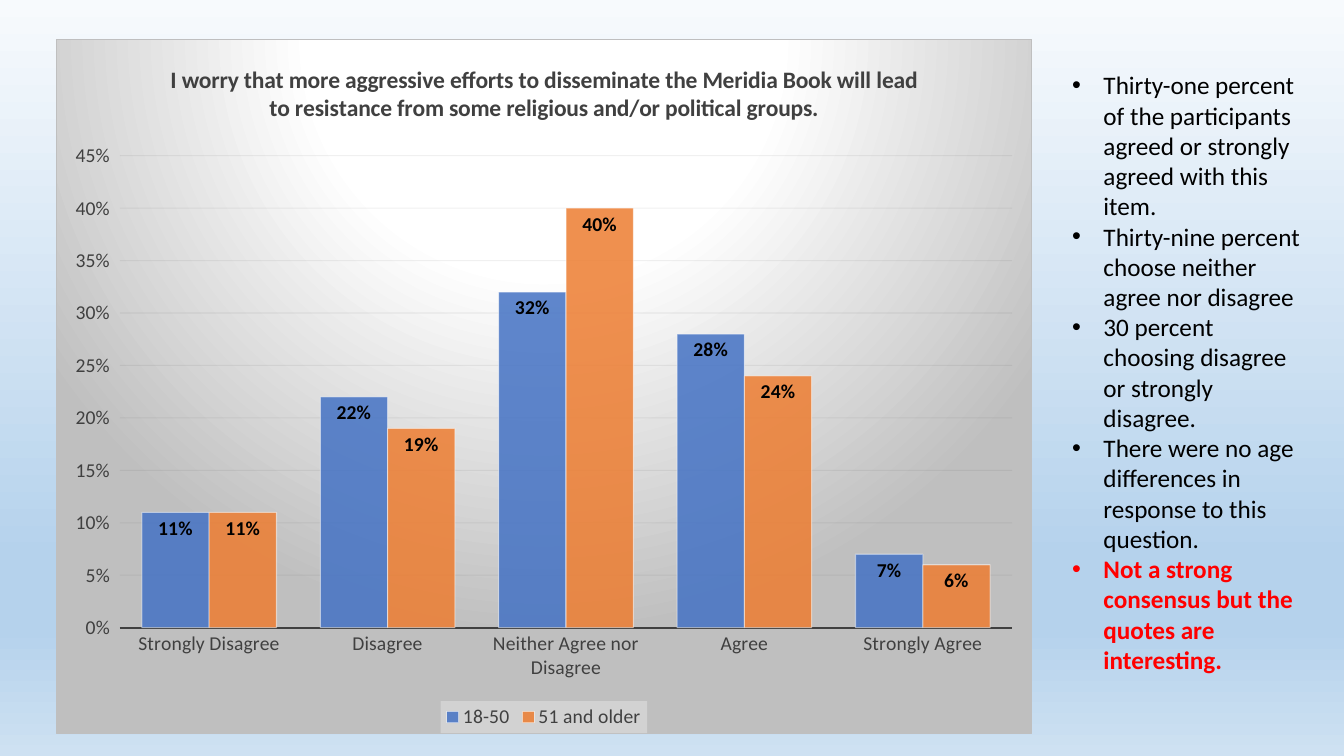
from lxml import etree
from pptx import Presentation
from pptx.chart.data import CategoryChartData
from pptx.dml.color import RGBColor
from pptx.enum.chart import XL_CHART_TYPE as ChartType
from pptx.enum.chart import XL_LABEL_POSITION as LabelPosition
from pptx.enum.chart import XL_LEGEND_POSITION as LegendPosition
from pptx.enum.chart import XL_TICK_MARK as TickMark
from pptx.enum.text import MSO_AUTO_SIZE as AutoSize
from pptx.oxml import parse_xml
from pptx.oxml.ns import nsdecls, qn
from pptx.util import Cm, Pt

FONT = "Calibri"
BLACK = RGBColor(0x00, 0x00, 0x00)
WHITE = RGBColor(0xFF, 0xFF, 0xFF)
RED = RGBColor(0xFF, 0x00, 0x00)
DARK_GREY = RGBColor(0x40, 0x40, 0x40)
GRID = RGBColor(0x0D, 0x0D, 0x0D)
SILVER = RGBColor(0xBF, 0xBF, 0xBF)
PALE_GREY = RGBColor(0xF2, 0xF2, 0xF2)
BLUE = RGBColor(0x44, 0x72, 0xC4)
ORANGE = RGBColor(0xED, 0x7D, 0x31)
SKY_TOP = RGBColor(0xF7, 0xFA, 0xFD)
SKY_MIDDLE = RGBColor(0xB5, 0xD2, 0xEC)
SKY_BOTTOM = RGBColor(0xCE, 0xE1, 0xF2)

SKY_STOPS = [(0, SKY_TOP), (74, SKY_MIDDLE), (83, SKY_MIDDLE), (100, SKY_BOTTOM)]
SPOTLIGHT_STOPS = [(0, WHITE), (39, WHITE), (100, SILVER)]
LINEAR_DOWN = '<a:lin ang="5400000" scaled="0"/>'
SPOTLIGHT = ('<a:path path="circle">'
             '<a:fillToRect l="50000" t="-80000" r="50000" b="180000"/></a:path>')

QUESTION = ("I worry that more aggressive efforts to disseminate the Meridia Book "
            "will lead to resistance from some religious and/or political groups.")
ANSWERS = ["Strongly Disagree", "Disagree", "Neither Agree nor Disagree",
           "Agree", "Strongly Agree"]
AGE_GROUPS = [
    ("18-50", [0.11, 0.22, 0.32, 0.28, 0.07], BLUE),
    ("51 and older", [0.11, 0.19, 0.40, 0.24, 0.06], ORANGE),
]
FINDINGS = [
    "Thirty-one percent of the participants agreed or strongly agreed with this item.",
    "Thirty-nine percent choose neither agree nor disagree",
    "30 percent choosing disagree or strongly disagree.",
    "There were no age differences in response to this question.",
]
CONCLUSION = "Not a strong consensus but the quotes are interesting."


def gradient(stops, direction):
    marks = "".join(f'<a:gs pos="{pos * 1000}"><a:srgbClr val="{color}"/></a:gs>'
                    for pos, color in stops)
    return (f'<a:gradFill {nsdecls("a")} rotWithShape="1">'
            f'<a:gsLst>{marks}</a:gsLst>{direction}</a:gradFill>')


def set_alpha(fill_parent, percent):
    color = next(fill_parent.iter(qn("a:srgbClr")))
    etree.SubElement(color, qn("a:alpha"), val=str(percent * 1000))


def style_font(font, size, color, bold=False):
    font.name, font.size, font.bold = FONT, Pt(size), bold
    font.color.rgb = color


def style_line(line, color, width, alpha=100):
    line.color.rgb = color
    line.width = Pt(width)
    if alpha < 100:
        set_alpha(line._get_or_add_ln(), alpha)


def paint_background(slide):
    slide.background.fill.solid()
    solid = next(slide.element.iter(qn("p:bgPr")))[0]
    solid.getparent().replace(solid, parse_xml(gradient(SKY_STOPS, LINEAR_DOWN)))


def add_area_format(text_properties, fill, line="<a:ln><a:noFill/></a:ln>"):
    """Fill and outline of a chart part, placed ahead of its text properties."""
    text_properties.addprevious(
        parse_xml(f'<c:spPr {nsdecls("c", "a")}>{fill}{line}</c:spPr>'))


def style_axes(chart):
    answers, share = chart.category_axis, chart.value_axis
    for axis in (answers, share):
        style_font(axis.tick_labels.font, 14, DARK_GREY)
    answers.major_tick_mark = TickMark.NONE
    style_line(answers.format.line, DARK_GREY, 1.5)
    share.minimum_scale, share.maximum_scale, share.major_unit = 0, 0.45, 0.05
    share.tick_labels.number_format = "0%"
    share.tick_labels.number_format_is_linked = False
    share.format.line.fill.background()
    style_line(share.major_gridlines.format.line, GRID, 0.75, alpha=6)


def style_age_group(bars, color):
    bars.format.fill.solid()
    bars.format.fill.fore_color.rgb = color
    set_alpha(bars.format.fill._xPr, 85)
    style_line(bars.format.line, WHITE, 0.75, alpha=50)
    labels = bars.data_labels
    labels.show_value = True
    labels.position = LabelPosition.INSIDE_END
    labels.number_format = "0%"
    labels.number_format_is_linked = False
    style_font(labels.font, 14, BLACK, bold=True)


def add_survey_chart(slide):
    data = CategoryChartData(number_format="0%")
    data.categories = ANSWERS
    for name, shares, _ in AGE_GROUPS:
        data.add_series(name, shares)
    chart = slide.shapes.add_chart(ChartType.COLUMN_CLUSTERED, Cm(1.4), Cm(0.99),
                                   Cm(24.61), Cm(17.5), data).chart
    style_font(chart.font, 14, BLACK)

    # Spotlight panel behind the chart
    border = f'<a:ln w="9525"><a:solidFill><a:srgbClr val="{SILVER}"/></a:solidFill></a:ln>'
    add_area_format(chart.element.find(qn("c:txPr")),
                    gradient(SPOTLIGHT_STOPS, SPOTLIGHT), border)

    # Survey question as title
    question = chart.chart_title.text_frame.paragraphs[0].add_run()
    question.text = QUESTION
    style_font(question.font, 16.8, DARK_GREY, bold=True)
    chart.chart_title.include_in_layout = False

    # Legend
    chart.has_legend = True
    chart.legend.position = LegendPosition.BOTTOM
    chart.legend.include_in_layout = False
    style_font(chart.legend.font, 14, DARK_GREY)
    add_area_format(next(chart.element.iter(qn("c:legend"))).find(qn("c:txPr")),
                    f'<a:solidFill><a:srgbClr val="{PALE_GREY}">'
                    '<a:alpha val="39000"/></a:srgbClr></a:solidFill>')

    # Axes and bars
    style_axes(chart)
    plot = chart.plots[0]
    plot.gap_width, plot.overlap, plot.vary_by_categories = 65, 0, False
    for bars, (_, _, color) in zip(plot.series, AGE_GROUPS):
        style_age_group(bars, color)


def add_bullet(paragraph, text, color, bold=False):
    properties = paragraph._p.get_or_add_pPr()
    properties.set("marL", str(Cm(0.79)))
    properties.set("indent", str(-Cm(0.79)))
    etree.SubElement(properties, qn("a:buFont"), typeface="Arial")
    etree.SubElement(properties, qn("a:buChar"), char="•")
    run = paragraph.add_run()
    run.text = text
    style_font(run.font, 18, color, bold)


def add_findings(slide):
    frame = slide.shapes.add_textbox(Cm(26.77), Cm(1.63), Cm(6.4), Cm(15.65)).text_frame
    frame.word_wrap = True
    frame.auto_size = AutoSize.SHAPE_TO_FIT_TEXT
    add_bullet(frame.paragraphs[0], FINDINGS[0], BLACK)
    for finding in FINDINGS[1:]:
        add_bullet(frame.add_paragraph(), finding, BLACK)
    add_bullet(frame.add_paragraph(), CONCLUSION, RED, bold=True)


def main():
    deck = Presentation()
    deck.slide_width, deck.slide_height = Cm(33.87), Cm(19.05)
    slide = deck.slides.add_slide(deck.slide_layouts[6])
    paint_background(slide)
    add_survey_chart(slide)
    add_findings(slide)
    deck.save("out.pptx")


if __name__ == "__main__":
    main()
